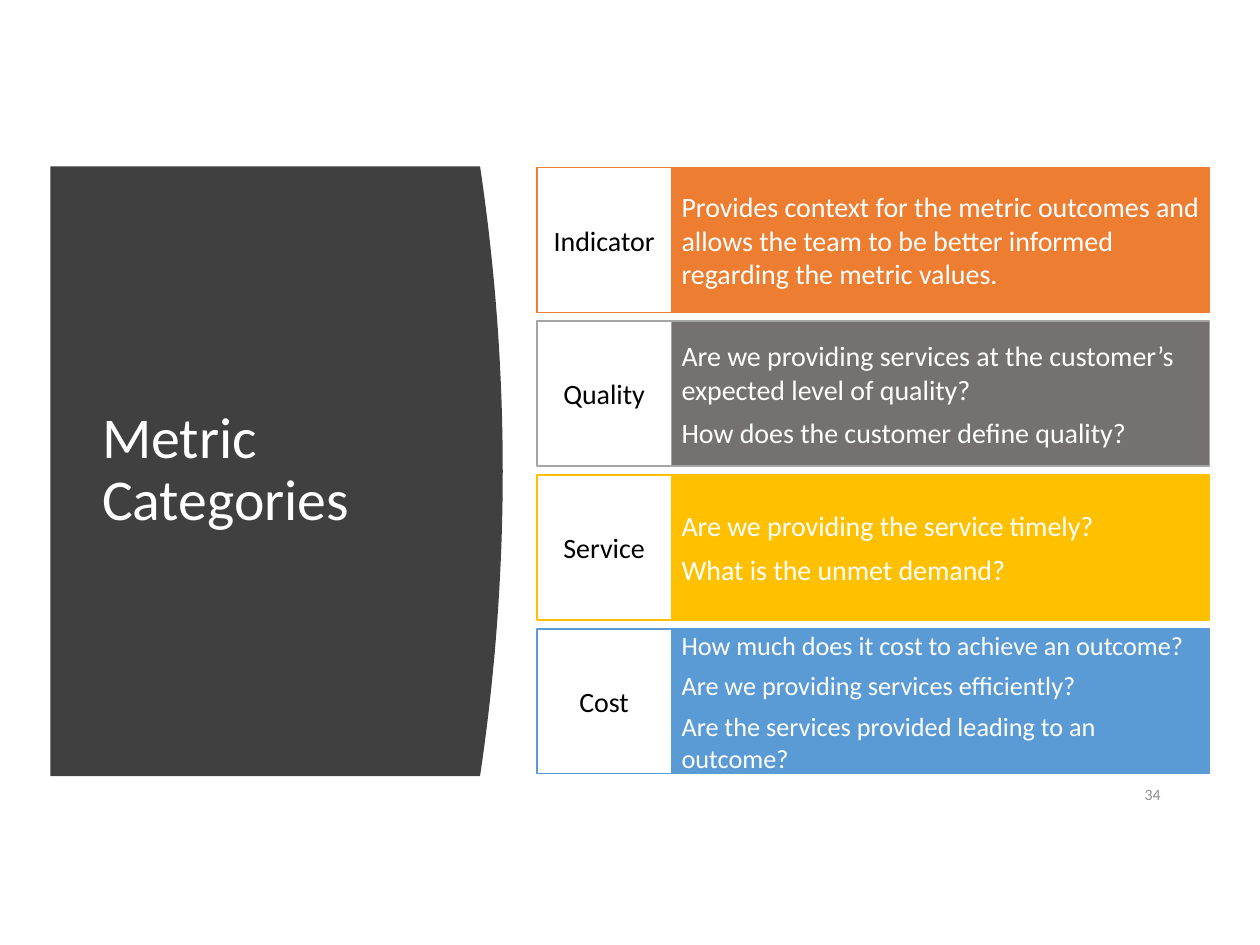
"""Build the Metric Categories slide."""
from pptx import Presentation
from pptx.dml.color import RGBColor
from pptx.enum.shapes import MSO_SHAPE
from pptx.enum.text import MSO_ANCHOR, PP_ALIGN
from pptx.util import Inches, Pt

WHITE = RGBColor(0xFF, 0xFF, 0xFF)
BLACK = RGBColor(0, 0, 0)
DARK = RGBColor(0x40, 0x40, 0x40)
PALE = RGBColor(0x8C, 0x8C, 0x8C)
ORANGE = RGBColor(0xED, 0x7D, 0x31)
GREY = RGBColor(0x76, 0x71, 0x71)
SILVER = RGBColor(0xA5, 0xA5, 0xA5)
GOLD = RGBColor(0xFF, 0xC0, 0x00)
BLUE = RGBColor(0x5B, 0x9B, 0xD5)


def write(shape, lines, size=16, color=WHITE, align=PP_ALIGN.LEFT,
          after=0, spacing=1.0, inset=(0.1, 0.05)):
    frame = shape.text_frame
    frame.word_wrap = True
    frame.vertical_anchor = MSO_ANCHOR.MIDDLE
    frame.margin_left = frame.margin_right = Inches(inset[0])
    frame.margin_top = frame.margin_bottom = Inches(inset[1])
    frame.text = "\n".join(lines)
    for para in frame.paragraphs:
        para.alignment = align
        para.line_spacing = spacing
        para.space_before = Pt(0)
        para.space_after = Pt(after)
        for run in para.runs:
            run.font.name = "Calibri"
            run.font.size = Pt(size)
            run.font.color.rgb = color


def add_box(left, top, width, height, fill, line):
    box = shapes.add_shape(MSO_SHAPE.RECTANGLE, Inches(left), Inches(top),
                           Inches(width), Inches(height))
    box.shadow.inherit = False
    box.fill.solid()
    box.fill.fore_color.rgb = fill
    box.line.color.rgb = line
    box.line.width = Pt(1)
    return box


deck = Presentation()
deck.slide_width, deck.slide_height = Inches(10), Inches(7.5)
slide = deck.slides.add_slide(deck.slide_layouts[5])
shapes = slide.shapes

LEFT, TOP, EDGE, BULGE, HALF, STEPS = 0.4, 1.32, 3.81, 0.18, 2.42, 40
curve = []
for step in range(STEPS + 1):
    turn = 2 * step / STEPS - 1
    curve.append((Inches(EDGE + BULGE * (1 - turn ** 2)),
                  Inches(TOP + HALF * (1 + turn))))
pen = shapes.build_freeform(Inches(LEFT), Inches(TOP))
pen.add_line_segments(curve + [(Inches(LEFT), Inches(TOP + 2 * HALF))])
panel = pen.convert_to_shape()
panel.shadow.inherit = False
panel.fill.solid()
panel.fill.fore_color.rgb = DARK
panel.line.fill.background()

title = shapes.title
title.left, title.top = Inches(0.71), Inches(1.77)
title.width, title.height = Inches(2.8), Inches(3.93)
write(title, ["Metric Categories"], size=33, spacing=0.9)
panel._element.addnext(title._element)

number = shapes.add_textbox(Inches(8.8), Inches(6.15), Inches(0.51), Inches(0.3))
write(number, ["34"], size=9, color=PALE, align=PP_ALIGN.RIGHT, after=4.5)

rows = [
    ("Indicator", ORANGE, ORANGE, 16,
     ["Provides context for the metric outcomes and allows the team "
      "to be better informed regarding the metric values."]),
    ("Quality", GREY, SILVER, 16,
     ["Are we providing services at the customer’s expected level of quality?",
      "How does the customer define quality?"]),
    ("Service", GOLD, GOLD, 16,
     ["Are we providing the service timely?", "What is the unmet demand?"]),
    ("Cost", BLUE, BLUE, 15,
     ["How much does it cost to achieve an outcome?",
      "Are we providing services efficiently?",
      "Are the services provided leading to an outcome?"]),
]
for index, (name, fill, line, size, lines) in enumerate(rows):
    top = 1.33 + 1.22 * index
    body = add_box(5.33, top, 4.27, 1.15, fill, line)
    write(body, lines, size=size, after=0.35 * size, inset=(0.08, 0.29))
    label = add_box(4.26, top, 1.07, 1.15, WHITE, line)
    write(label, [name], color=BLACK, align=PP_ALIGN.CENTER, after=5.6,
          inset=(0.06, 0.11))

deck.save("out.pptx")
